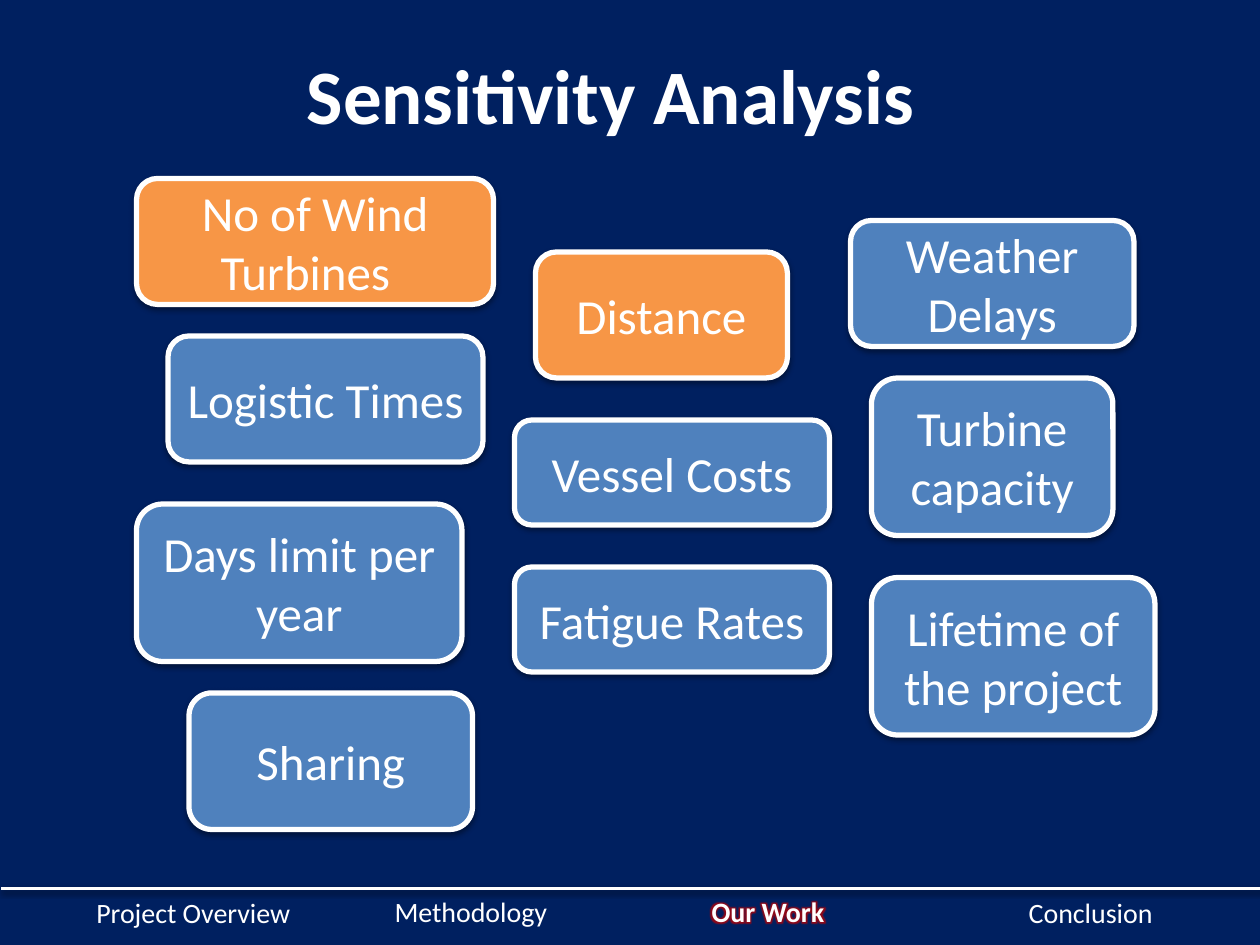
import pptx
import pptx.dml.color
import pptx.enum.shapes
import pptx.enum.text
import pptx.oxml
import pptx.oxml.ns
import pptx.util

COLORS = {"navy": "002060", "white": "FFFFFF", "orange": "F79646",
          "blue": "4F81BD", "glow": "C00000", "shadow": "000000"}
COLUMNS, ROWS = 120, 90  # grid of twelfths of an inch


def rgb(name):
    return pptx.dml.color.RGBColor.from_string(COLORS[name])


class SlideBuilder:
    """Holds the style and the current slide; lengths are grid columns and rows."""

    def __init__(self, presentation):
        self.column = presentation.slide_width / COLUMNS
        self.row = presentation.slide_height / ROWS
        self.slide = presentation.slides.add_slide(presentation.slide_layouts[5])
        self.font = {"name": "Calibri", "bold": False}
        self.middle = {"vertical_anchor": pptx.enum.text.MSO_ANCHOR.MIDDLE, "word_wrap": True}

    def place(self, left, top, width, height):
        return [round(length) for length in (left * self.column, top * self.row,
                                             width * self.column, height * self.row)]

    def background(self, color):
        fill = self.slide.background.fill
        fill.solid()
        fill.fore_color.rgb = rgb(color)

    def format_run(self, run, **values):
        for name, value in (self.font | values).items():
            setattr(run.font, name, value)
        run.font.color.rgb = rgb("white")

    def add_text(self, frame, text, size, centred=True, frame_values=None, **values):
        for name, value in (frame_values or self.middle).items():
            setattr(frame, name, value)
        paragraph = frame.paragraphs[0]
        if centred:
            paragraph.alignment = pptx.enum.text.PP_ALIGN.CENTER
        run = paragraph.add_run()
        run.text = text
        self.format_run(run, size=pptx.util.Pt(size), **values)
        return run

    def effect(self, kind, attributes, color, alpha):
        return pptx.oxml.parse_xml(
            f'<a:effectLst {pptx.oxml.ns.nsdecls("a")}><a:{kind} {attributes}>'
            f'<a:srgbClr val="{COLORS[color]}"><a:alpha val="{alpha * 1000}"/></a:srgbClr>'
            f'</a:{kind}></a:effectLst>')

    def outline(self, shape, width):
        shape.line.color.rgb = rgb("white")
        shape.line.width = pptx.util.Pt(width)
        shape._element.spPr.append(self.effect(
            "outerShdw", 'blurRad="40000" dist="20000" dir="5400000" rotWithShape="0"',
            "shadow", 38))

    def title(self, text, *box):
        title = self.slide.shapes.title
        title.left, title.top, title.width, title.height = self.place(*box)
        self.add_text(title.text_frame, text, 44, bold=True)

    def card(self, text, color, *box):
        shape = self.slide.shapes.add_shape(
            pptx.enum.shapes.MSO_SHAPE.ROUNDED_RECTANGLE, *self.place(*box))
        shape.fill.solid()
        shape.fill.fore_color.rgb = rgb(color)
        self.outline(shape, 3)
        self.add_text(shape.text_frame, text, 28)
        return shape

    def rule(self, left, right, top):
        start, height, end, _ = self.place(left, top, right, 0)
        line = self.slide.shapes.add_connector(
            pptx.enum.shapes.MSO_CONNECTOR.STRAIGHT, start, height, end, height)
        self.outline(line, 2)

    def footer_item(self, text, left, top, active=False):
        box = self.slide.shapes.add_textbox(*self.place(left, top, 26.4, 4.4))
        run = self.add_text(box.text_frame, text, 16, centred=False, bold=active, frame_values={
            "word_wrap": True, "auto_size": pptx.enum.text.MSO_AUTO_SIZE.SHAPE_TO_FIT_TEXT})
        if active:
            fill = run.font._element.find(pptx.oxml.ns.qn("a:solidFill"))
            fill.addnext(self.effect("glow", 'rad="63500"', "glow", 75))


def main():
    presentation = pptx.Presentation()
    presentation.slide_width = pptx.util.Inches(10)
    presentation.slide_height = pptx.util.Inches(7.5)
    builder = SlideBuilder(presentation)
    builder.background("navy")

    # Footer navigation
    for text, left, top, active in (
            ("Project Overview", 8, 84.7, False), ("Methodology", 36.4, 84.6, False),
            ("Our Work", 66.6, 84.6, True), ("Conclusion", 96.8, 84.7, False)):
        builder.footer_item(text, left, top, active)
    builder.rule(0.1, 120.1, 84.6)

    # Title
    builder.title("Sensitivity Analysis", 4.2, 1.4, 108, 15)

    # Parameters studied, the highlighted ones in orange
    turbines = builder.card("No of Wind Turbines", "orange", 13, 17, 34, 12)
    tab = turbines.text_frame.paragraphs[0].add_run()
    tab.text = "\t"
    builder.format_run(tab, size=pptx.util.Pt(24))
    for text, color, *box in (
            ("Distance", "orange", 51, 24, 24, 12),
            ("Logistic Times", "blue", 16, 32, 30, 12),
            ("Fatigue Rates", "blue", 49, 54, 30, 10),
            ("Vessel Costs", "blue", 49, 40, 30, 10),
            ("Weather Delays", "blue", 81, 21, 27, 12),
            ("Sharing", "blue", 18, 66, 27, 13),
            ("Turbine capacity", "blue", 83, 36, 23, 15),
            ("Days limit per year", "blue", 13, 48, 31, 15),
            ("Lifetime of the project", "blue", 83, 55, 27, 15)):
        builder.card(text, color, *box)

    presentation.save("out.pptx")


if __name__ == "__main__":
    main()
